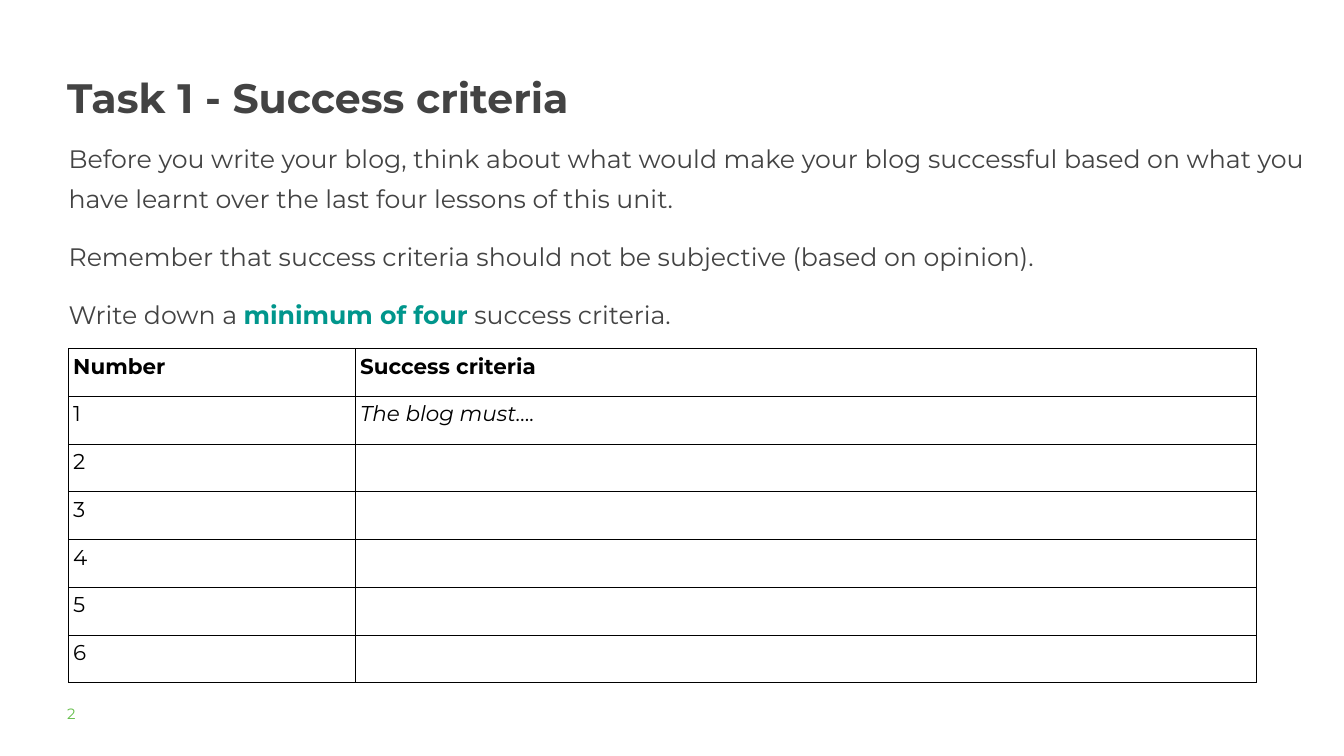
from typing import NamedTuple

from lxml.etree import SubElement
from pptx import Presentation
from pptx.dml.color import RGBColor
from pptx.enum.text import MSO_ANCHOR, MSO_AUTO_SIZE, PP_ALIGN
from pptx.oxml.ns import qn
from pptx.util import Pt

PX = 9144
FONT = "Montserrat"
GREY = RGBColor(0x43, 0x43, 0x43)
TEAL = RGBColor(0x00, 0x96, 0x8C)
GREEN = RGBColor(0x65, 0xBE, 0x4B)
BLACK = RGBColor(0x00, 0x00, 0x00)
WHITE = RGBColor(0xFF, 0xFF, 0xFF)


class Box(NamedTuple):
    x: int
    y: int
    w: int
    h: int


class Run(NamedTuple):
    text: str
    color: RGBColor = GREY
    bold: bool = False


class Row(NamedTuple):
    number: str
    criterion: str = ""
    bold: bool = False
    italic: bool = False


TITLE = Box(100, 97, 864, 178)
BODY = Box(102, 200, 1868, 282)
PAGE = Box(100, 1048, 157, 39)
COLUMNS = [427, 1340]
ROW_H = 71
PARAGRAPHS = [
    [Run("Before you write your blog, think about what would make your blog successful "
         "based on what you have learnt over the last four lessons of this unit.")],
    [Run("Remember that success criteria should not be subjective (based on opinion).")],
    [Run("Write down a "), Run("minimum of four", TEAL, True), Run(" success criteria.")],
]
ROWS = [
    Row("Number", "Success criteria", bold=True),
    Row("1", "The blog must….", italic=True),
    *(Row(str(n)) for n in range(2, 7)),
]


def place(sp, box: Box):
    sp.left, sp.top, sp.width, sp.height = (v * PX for v in box)
    tf = sp.text_frame
    tf.margin_left = tf.margin_right = tf.margin_top = tf.margin_bottom = 0
    tf.word_wrap = True
    tf.auto_size = MSO_AUTO_SIZE.NONE
    tf.vertical_anchor = MSO_ANCHOR.TOP
    return tf


def set_font(p, size: int, color: RGBColor | None = None, bold: bool = False) -> None:
    p.alignment = PP_ALIGN.LEFT
    p.font.name = FONT
    p.font.size = Pt(size)
    p.font.bold = bold
    if color is not None:
        p.font.color.rgb = color


def add_borders(cell) -> None:
    tc_pr = cell._tc.get_or_add_tcPr()
    for i, side in enumerate(("lnL", "lnR", "lnT", "lnB")):
        ln = SubElement(tc_pr, qn(f"a:{side}"), w=str(Pt(1)))
        fill = SubElement(ln, qn("a:solidFill"))
        SubElement(fill, qn("a:srgbClr"), val=str(BLACK))
        tc_pr.insert(i, ln)


def add_title(s, text: str) -> None:
    tf = place(s.shapes.title, TITLE)
    p = tf.paragraphs[0]
    p.text = text
    p.line_spacing = 1.15
    set_font(p, 44, GREY, True)


def add_page_number(s, text: str) -> None:
    tf = place(s.shapes.add_textbox(0, 0, 0, 0), PAGE)
    p = tf.paragraphs[0]
    p.text = text
    set_font(p, 16, GREEN)


def add_body(s, paragraphs: list[list[Run]]) -> None:
    tf = place(s.shapes.add_textbox(0, 0, 0, 0), BODY)
    for i, runs in enumerate(paragraphs):
        p = tf.add_paragraph() if i else tf.paragraphs[0]
        p.line_spacing = 1.3
        if i:
            p.space_before = Pt(20)
        set_font(p, 27)
        for run in runs:
            r = p.add_run()
            r.text = run.text
            r.font.bold = run.bold
            r.font.color.rgb = run.color


def add_criteria_table(s, rows: list[Row]) -> None:
    frame = s.shapes.add_table(len(rows), len(COLUMNS), 102 * PX, 519 * PX,
                               sum(COLUMNS) * PX, len(rows) * ROW_H * PX)
    table = frame.table
    table.first_row = table.horz_banding = False
    for column, width in zip(table.columns, COLUMNS):
        column.width = width * PX
    for i, row in enumerate(rows):
        table.rows[i].height = ROW_H * PX
        for j, text in enumerate((row.number, row.criterion)):
            cell = table.cell(i, j)
            cell.margin_left = cell.margin_right = 7 * PX
            cell.margin_top = cell.margin_bottom = 7 * PX
            cell.fill.solid()
            cell.fill.fore_color.rgb = WHITE
            add_borders(cell)
            p = cell.text_frame.paragraphs[0]
            p.text = text
            set_font(p, 23, BLACK, row.bold)
            p.font.italic = row.italic and j == 1


def main() -> None:
    prs = Presentation()
    prs.slide_width, prs.slide_height = 2000 * PX, 1125 * PX
    s = prs.slides.add_slide(prs.slide_layouts[5])
    add_title(s, "Task 1 - Success criteria")
    add_page_number(s, "2")
    add_body(s, PARAGRAPHS)
    add_criteria_table(s, ROWS)
    prs.save("out.pptx")


if __name__ == "__main__":
    main()
